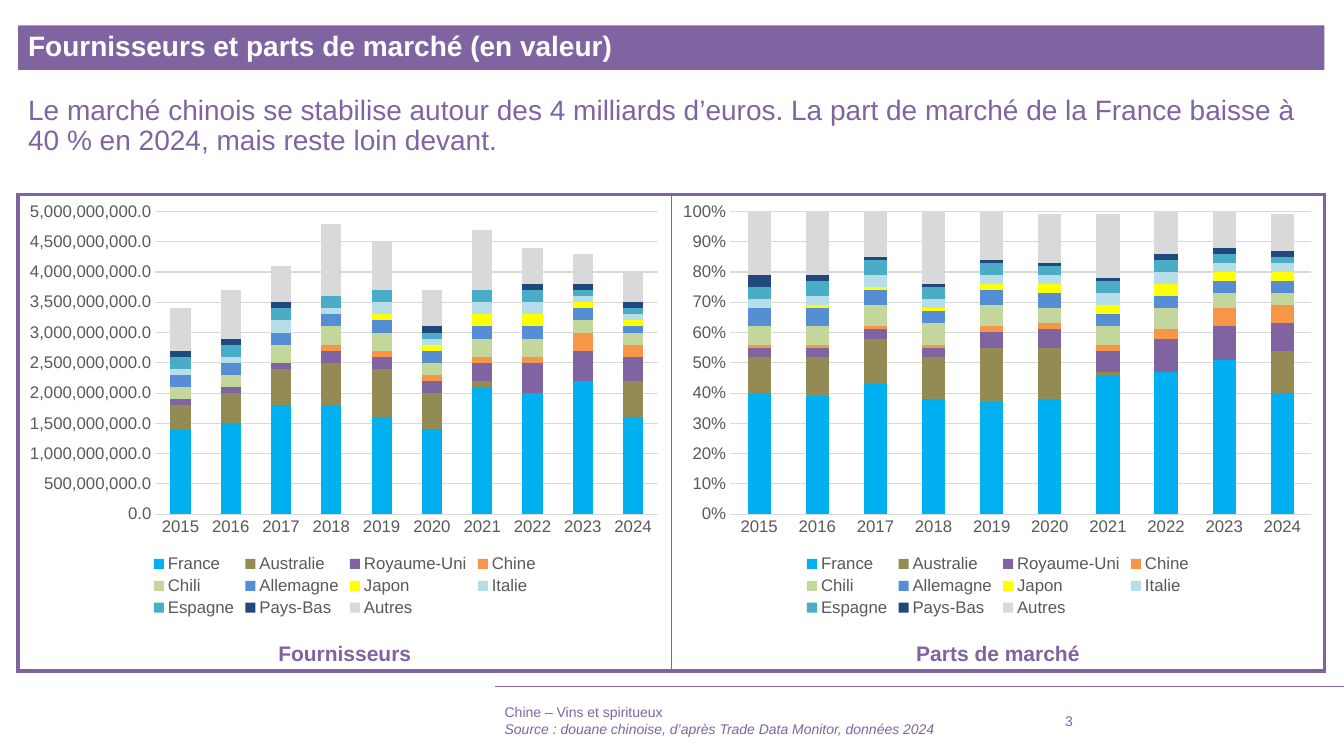
from lxml import etree
from pptx import Presentation
from pptx.chart.data import CategoryChartData
from pptx.dml.color import RGBColor
from pptx.enum import chart as charts, shapes, text
from pptx.oxml import parse_xml
from pptx.oxml.ns import nsdecls, qn
from pptx.util import Cm, Pt

# Content
TITLE = "Fournisseurs et parts de marché (en valeur)"
MESSAGE = ("Le marché chinois se stabilise autour des 4 milliards d’euros. "
           "La part de marché de la France baisse à 40 % en 2024, mais reste loin devant.")
FOOTER = ["Chine – Vins et spiritueux",
          "Source : douane chinoise, d’après Trade Data Monitor, données 2024"]
PAGE = "3"
YEARS = [str(year) for year in range(2015, 2025)]
# Country, colour, sales in hundreds of millions of euros, share in percent
SUPPLIERS = [
    ("France", "00B0F0", [14, 15, 18, 18, 16, 14, 21, 20, 22, 16],
     [40, 39, 43, 38, 37, 38, 46, 47, 51, 40]),
    ("Australie", "948A54", [4, 5, 6, 7, 8, 6, 1, 0, 0, 6],
     [12, 13, 15, 14, 18, 17, 1, 0, 0, 14]),
    ("Royaume-Uni", "8064A2", [1, 1, 1, 2, 2, 2, 3, 5, 5, 4],
     [3, 3, 3, 3, 5, 6, 7, 11, 11, 9]),
    ("Chine", "F79646", [0, 0, 0, 1, 1, 1, 1, 1, 3, 2],
     [1, 1, 1, 1, 2, 2, 2, 3, 6, 6]),
    ("Chili", "C3D69B", [2, 2, 3, 3, 3, 2, 3, 3, 2, 2],
     [6, 6, 7, 7, 7, 5, 6, 7, 5, 4]),
    ("Allemagne", "558ED5", [2, 2, 2, 2, 2, 2, 2, 2, 2, 1],
     [6, 6, 5, 4, 5, 5, 4, 4, 4, 4]),
    ("Japon", "FFFF00", [0, 0, 0, 0, 1, 1, 2, 2, 1, 1],
     [0, 1, 1, 1, 2, 3, 3, 4, 3, 3]),
    ("Italie", "B7DEE8", [1, 1, 2, 1, 2, 1, 2, 2, 1, 1],
     [3, 3, 4, 3, 3, 3, 4, 4, 3, 3]),
    ("Espagne", "4BACC6", [2, 2, 2, 2, 2, 1, 2, 2, 1, 1],
     [4, 5, 5, 4, 4, 3, 4, 4, 3, 2]),
    ("Pays-Bas", "1F497D", [1, 1, 1, 0, 0, 1, 0, 1, 1, 1],
     [4, 2, 1, 1, 1, 1, 1, 2, 2, 2]),
    ("Autres", "D9D9D9", [7, 8, 6, 12, 8, 6, 10, 6, 5, 5],
     [21, 21, 15, 25, 17, 16, 21, 14, 13, 12]),
]
SALES = [[value * 100_000_000 for value in row[2]] for row in SUPPLIERS]
SHARES = [[value / 100 for value in row[3]] for row in SUPPLIERS]
# Caption, values, axis maximum, axis step, number format, plot left and width
PANELS = [
    ("Fournisseurs", SALES, 5_000_000_000, 500_000_000, "#,##0.0", 0.21, 0.77),
    ("Parts de marché", SHARES, 1, 0.1, "0%", 0.09, 0.89),
]

# Style and grid, in centimetres
FONT, PURPLE, WHITE, GREY, LIGHT = "Arial", "8064A2", "FFFFFF", "595959", "D9D9D9"
LEFT, WIDTH, PANEL_TOP, PANEL_HEIGHT = 0.46, 32.92, 4.9, 12.01
PANEL_WIDTH = WIDTH / 2
CHART_HEIGHT, CAPTION_HEIGHT = 10.74, 0.89
CAPTION_TOP = PANEL_TOP + PANEL_HEIGHT - CAPTION_HEIGHT
FOOTER_LEFT, FOOTER_TOP, FOOTER_HEIGHT = 12.47, 17.65, 1.02
SLIDE_WIDTH, SLIDE_HEIGHT = 33.87, 19.05


def colour(hex_code):
    return RGBColor.from_string(hex_code)


def box(*lengths):
    return [Cm(length) for length in lengths]


def set_font(font, size, hex_code, bold=False, italic=False):
    font.name, font.size, font.bold, font.italic = FONT, Pt(size), bold, italic
    font.color.rgb = colour(hex_code)


def write(shape, lines, size, hex_code=PURPLE, bold=False, spacing=None,
          align=text.PP_ALIGN.LEFT, anchor=text.MSO_ANCHOR.TOP):
    frame = shape.text_frame
    frame.word_wrap = True
    frame.vertical_anchor = anchor
    frame.text = "\n".join(lines)
    for paragraph in frame.paragraphs:
        paragraph.alignment = align
        paragraph.line_spacing = spacing
        set_font(paragraph.font, size, hex_code, bold)
    return frame


def set_border(cell, side, points):
    cell._tc.get_or_add_tcPr().append(parse_xml(
        f'<a:{side} {nsdecls("a")} w="{Pt(points)}"><a:solidFill>'
        f'<a:srgbClr val="{PURPLE}"/></a:solidFill></a:{side}>'))


def place_plot(chart, left, width, top=0.04, height=0.71):
    plot_area = chart._chartSpace.chart.plotArea
    for layout in plot_area.findall(qn("c:layout")):
        plot_area.remove(layout)
    layout = etree.Element(qn("c:layout"))
    manual = etree.SubElement(layout, qn("c:manualLayout"))
    for tag, value in [("layoutTarget", "inner"), ("xMode", "edge"), ("yMode", "edge"),
                       ("x", left), ("y", top), ("w", width), ("h", height)]:
        etree.SubElement(manual, qn(f"c:{tag}")).set("val", str(value))
    plot_area.insert(0, layout)


def add_supplier_chart(slide, left, values, maximum, step, number_format, plot_left, plot_width):
    data = CategoryChartData(number_format=number_format)
    data.categories = YEARS
    for supplier, row in zip(SUPPLIERS, values):
        data.add_series(supplier[0], row)
    chart = slide.shapes.add_chart(
        charts.XL_CHART_TYPE.COLUMN_STACKED,
        *box(left, PANEL_TOP, PANEL_WIDTH, CHART_HEIGHT), data).chart
    chart.has_title = False
    set_font(chart.font, 12, GREY)
    chart.has_legend = True
    chart.legend.position = charts.XL_LEGEND_POSITION.BOTTOM
    chart.legend.include_in_layout = False
    set_font(chart.legend.font, 12, GREY)

    plot = chart.plots[0]
    plot.gap_width, plot.overlap, plot.vary_by_categories = 150, 100, False
    for series, supplier in zip(plot.series, SUPPLIERS):
        series.format.fill.solid()
        series.format.fill.fore_color.rgb = colour(supplier[1])

    value_axis = chart.value_axis
    value_axis.minimum_scale, value_axis.maximum_scale = 0, maximum
    value_axis.major_unit = step
    value_axis.tick_labels.number_format = number_format
    value_axis.tick_labels.number_format_is_linked = False
    value_axis.format.line.fill.background()
    for axis in (chart.category_axis, value_axis):
        axis.major_tick_mark = axis.minor_tick_mark = charts.XL_TICK_MARK.NONE
        set_font(axis.tick_labels.font, 12, GREY)
    for line in (chart.category_axis.format.line, value_axis.major_gridlines.format.line):
        line.color.rgb = colour(LIGHT)
        line.width = Pt(0.75)
    place_plot(chart, plot_left, plot_width)


presentation = Presentation()
presentation.slide_width, presentation.slide_height = box(SLIDE_WIDTH, SLIDE_HEIGHT)
slide = presentation.slides.add_slide(presentation.slide_layouts[6])

# Footer rule
rule = slide.shapes.add_connector(shapes.MSO_CONNECTOR.STRAIGHT,
                                  *box(SLIDE_WIDTH, 17.3, FOOTER_LEFT, 17.3))
rule.line.color.rgb = colour(PURPLE)
rule.line.width = Pt(0.5)
etree.SubElement(rule._element.spPr, qn("a:effectLst"))

# Two-panel frame
table = slide.shapes.add_table(1, 2, *box(LEFT, PANEL_TOP, WIDTH, PANEL_HEIGHT)).table
table.first_row = table.horz_banding = False
for cell, left_line, right_line in zip(table.rows[0].cells, (3, 1), (1, 3)):
    for side, points in [("lnL", left_line), ("lnR", right_line), ("lnT", 3), ("lnB", 3)]:
        set_border(cell, side, points)
    cell.fill.background()

# Title bar and key message
bar = slide.shapes.add_shape(shapes.MSO_SHAPE.RECTANGLE, *box(LEFT, 0.64, WIDTH, 1.12))
bar.shadow.inherit = False
bar.fill.solid()
bar.fill.fore_color.rgb = colour(PURPLE)
bar.line.fill.background()
write(bar, [TITLE], 20, WHITE, bold=True, spacing=0.9, anchor=text.MSO_ANCHOR.MIDDLE)
write(slide.shapes.add_textbox(*box(LEFT, 2.29, WIDTH, 2.06)), [MESSAGE], 20, spacing=0.9)

# Charts with captions
for index, (caption, *chart_settings) in enumerate(PANELS):
    panel_left = LEFT + index * PANEL_WIDTH
    add_supplier_chart(slide, panel_left, *chart_settings)
    label = slide.shapes.add_textbox(*box(panel_left, CAPTION_TOP, PANEL_WIDTH, CAPTION_HEIGHT))
    write(label, [caption], 15, bold=True, align=text.PP_ALIGN.CENTER)

# Footer and page number
for lines, left, width in [(FOOTER, FOOTER_LEFT, 13.79), ([PAGE], 26.59, 2.51)]:
    footer = slide.shapes.add_textbox(*box(left, FOOTER_TOP, width, FOOTER_HEIGHT))
    frame = write(footer, lines, 10, anchor=text.MSO_ANCHOR.MIDDLE)
    for paragraph in frame.paragraphs[1:]:
        paragraph.font.italic = True

presentation.save("out.pptx")
